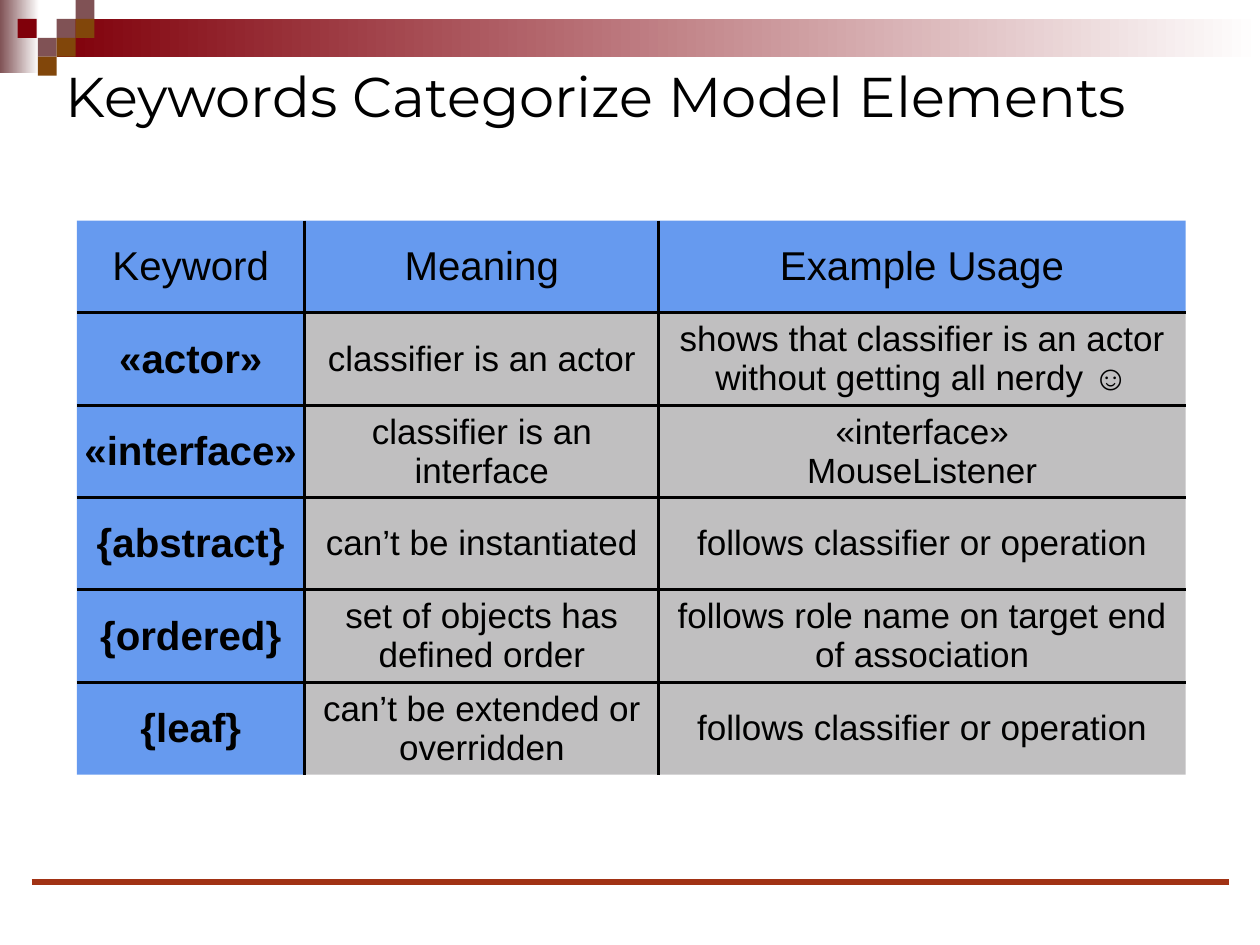
"""Build the slide on keywords that categorize model elements."""
from dataclasses import dataclass

from lxml import etree
from pptx import Presentation
from pptx.dml.color import RGBColor
from pptx.enum.shapes import MSO_CONNECTOR, MSO_SHAPE
from pptx.enum.text import MSO_ANCHOR, MSO_AUTO_SIZE, PP_ALIGN
from pptx.oxml.ns import qn
from pptx.util import Inches, Pt

RECTANGLE = MSO_SHAPE.RECTANGLE
STRAIGHT = MSO_CONNECTOR.STRAIGHT
MIDDLE = MSO_ANCHOR.MIDDLE
LEFT, CENTER = PP_ALIGN.LEFT, PP_ALIGN.CENTER
NO_AUTOFIT = MSO_AUTO_SIZE.NONE
TITLE_ONLY = 5


@dataclass(frozen=True)
class Theme:
    """Colours, fonts and sizes of the slide."""

    black: str = "000000"
    white: str = "FFFFFF"
    mauve: str = "805255"
    crimson: str = "80000A"
    brown: str = "81460A"
    rule: str = "A13214"
    key_fill: tuple = ("0057E5", 60)
    body_fill: tuple = ("534E51", 36)
    title_font: str = "Montserrat"
    table_font: str = "Arial"
    title_size: int = 32
    key_size: int = 23
    body_size: int = 20
    border_width: int = 2
    rule_width: int = 3


THEME = Theme()
SQUARE = 0.15
SQUARES = [
    (0.45, 0.15, THEME.mauve),
    (0.6, 0, THEME.mauve),
    (0.6, 0.15, THEME.brown),
    (0.3, 0.3, THEME.mauve),
    (0.14, 0.15, THEME.crimson),
    (0.45, 0.3, THEME.brown),
    (0.3, 0.45, THEME.brown),
]
COLUMN_WIDTHS = [1.81, 2.81, 4.18]
KEYWORD_ROWS = [
    ("Keyword", "Meaning", "Example Usage"),
    ("«actor»", "classifier is an actor",
     "shows that classifier is an actor without getting all nerdy ☺"),
    ("«interface»", "classifier is an interface", "«interface»\vMouseListener"),
    ("{abstract}", "can’t be instantiated", "follows classifier or operation"),
    ("{ordered}", "set of objects has defined order",
     "follows role name on target end of association"),
    ("{leaf}", "can’t be extended or overridden", "follows classifier or operation"),
]


def write_text(text_frame, text, *, font, size, color=THEME.black, bold=False, align=LEFT):
    """Write one formatted paragraph into a text frame."""
    text_frame.word_wrap = True
    paragraph = text_frame.paragraphs[0]
    paragraph.text = text
    paragraph.alignment = align
    for run in paragraph.runs:
        run.font.name = font
        run.font.size = Pt(size)
        run.font.bold = bold
        run.font.color.rgb = RGBColor.from_string(color)


def add_block(slide, left, top, width, height, color, fade_to=None):
    """Add a borderless rectangle, plain or fading to the right."""
    shape = slide.shapes.add_shape(
        RECTANGLE, Inches(left), Inches(top), Inches(width), Inches(height))
    shape.shadow.inherit = False
    shape.line.fill.background()
    if fade_to is None:
        shape.fill.solid()
        shape.fill.fore_color.rgb = RGBColor.from_string(color)
        return
    shape.fill.gradient()
    shape.fill.gradient_angle = 0
    for stop, stop_color in zip(shape.fill.gradient_stops, (color, fade_to)):
        stop.color.rgb = RGBColor.from_string(stop_color)


def add_banner(slide):
    """Add the fading bars and the checkered squares at the top."""
    add_block(slide, 0, 0, 0.31, 0.58, THEME.mauve, fade_to=THEME.white)
    add_block(slide, 0.45, 0.15, 9.55, 0.3, THEME.crimson, fade_to=THEME.white)
    for left, top, color in SQUARES:
        add_block(slide, left, top, SQUARE, SQUARE, color)


def add_footer_rule(slide, left, top, width):
    """Add the horizontal rule at the bottom."""
    rule = slide.shapes.add_connector(
        STRAIGHT, Inches(left), Inches(top), Inches(left + width), Inches(top))
    rule.line.color.rgb = RGBColor.from_string(THEME.rule)
    rule.line.width = Pt(THEME.rule_width)
    etree.SubElement(rule._element.spPr, qn("a:effectLst"))


def place_title(slide, text, left, top, width, height):
    """Move the title placeholder and write its text."""
    title = slide.shapes.title
    title.left, title.top = Inches(left), Inches(top)
    title.width, title.height = Inches(width), Inches(height)
    title.text_frame.auto_size = NO_AUTOFIT
    title.text_frame.vertical_anchor = MIDDLE
    write_text(title.text_frame, text, font=THEME.title_font, size=THEME.title_size)


def fill_cell(cell, color, opacity):
    """Give a cell a translucent fill."""
    cell.fill.solid()
    cell.fill.fore_color.rgb = RGBColor.from_string(color)
    color_element = cell._tc.tcPr.find(".//" + qn("a:srgbClr"))
    etree.SubElement(color_element, qn("a:alpha"), val=str(opacity * 1000))


def set_borders(cell, visible_sides):
    """Draw the visible sides of a cell and hide the others."""
    for index, side in enumerate("LRTB"):
        line = etree.Element(qn(f"a:ln{side}"), w=str(Pt(THEME.border_width)))
        if side in visible_sides:
            fill = etree.SubElement(line, qn("a:solidFill"))
            etree.SubElement(fill, qn("a:srgbClr"), val=THEME.black)
        else:
            etree.SubElement(line, qn("a:noFill"))
        cell._tc.tcPr.insert(index, line)


def inner_sides(row, column, row_count, column_count):
    """Return the sides of a cell that lie inside the table."""
    inside = {"L": column > 0, "R": column < column_count - 1,
              "T": row > 0, "B": row < row_count - 1}
    return {side for side, is_inside in inside.items() if is_inside}


def add_keyword_table(slide, left, top, height):
    """Add the table of keywords, meanings and usages."""
    row_count, column_count = len(KEYWORD_ROWS), len(COLUMN_WIDTHS)
    table = slide.shapes.add_table(
        row_count, column_count, Inches(left), Inches(top),
        Inches(sum(COLUMN_WIDTHS)), Inches(height)).table
    table.first_row = table.horz_banding = False
    for column, width in zip(table.columns, COLUMN_WIDTHS):
        column.width = Inches(width)
    for row, texts in enumerate(KEYWORD_ROWS):
        for column, text in enumerate(texts):
            cell = table.cell(row, column)
            is_key = row == 0 or column == 0
            cell.vertical_anchor = MIDDLE
            cell.margin_left = cell.margin_right = Inches(0.04)
            cell.margin_top = cell.margin_bottom = Inches(0.04)
            fill_cell(cell, *(THEME.key_fill if is_key else THEME.body_fill))
            set_borders(cell, inner_sides(row, column, row_count, column_count))
            write_text(cell.text_frame, text, font=THEME.table_font,
                       size=THEME.key_size if is_key else THEME.body_size,
                       bold=row > 0 and column == 0, align=CENTER)


def main():
    """Build and save the presentation."""
    presentation = Presentation()
    presentation.slide_width, presentation.slide_height = Inches(10), Inches(7.5)
    slide = presentation.slides.add_slide(presentation.slide_layouts[TITLE_ONLY])
    add_banner(slide)
    add_footer_rule(slide, 0.25, 7, 9.5)
    place_title(slide, "Keywords Categorize Model Elements", 0.42, 0.42, 9.5, 0.67)
    add_keyword_table(slide, 0.61, 1.75, 4.4)
    presentation.save("out.pptx")


if __name__ == "__main__":
    main()
